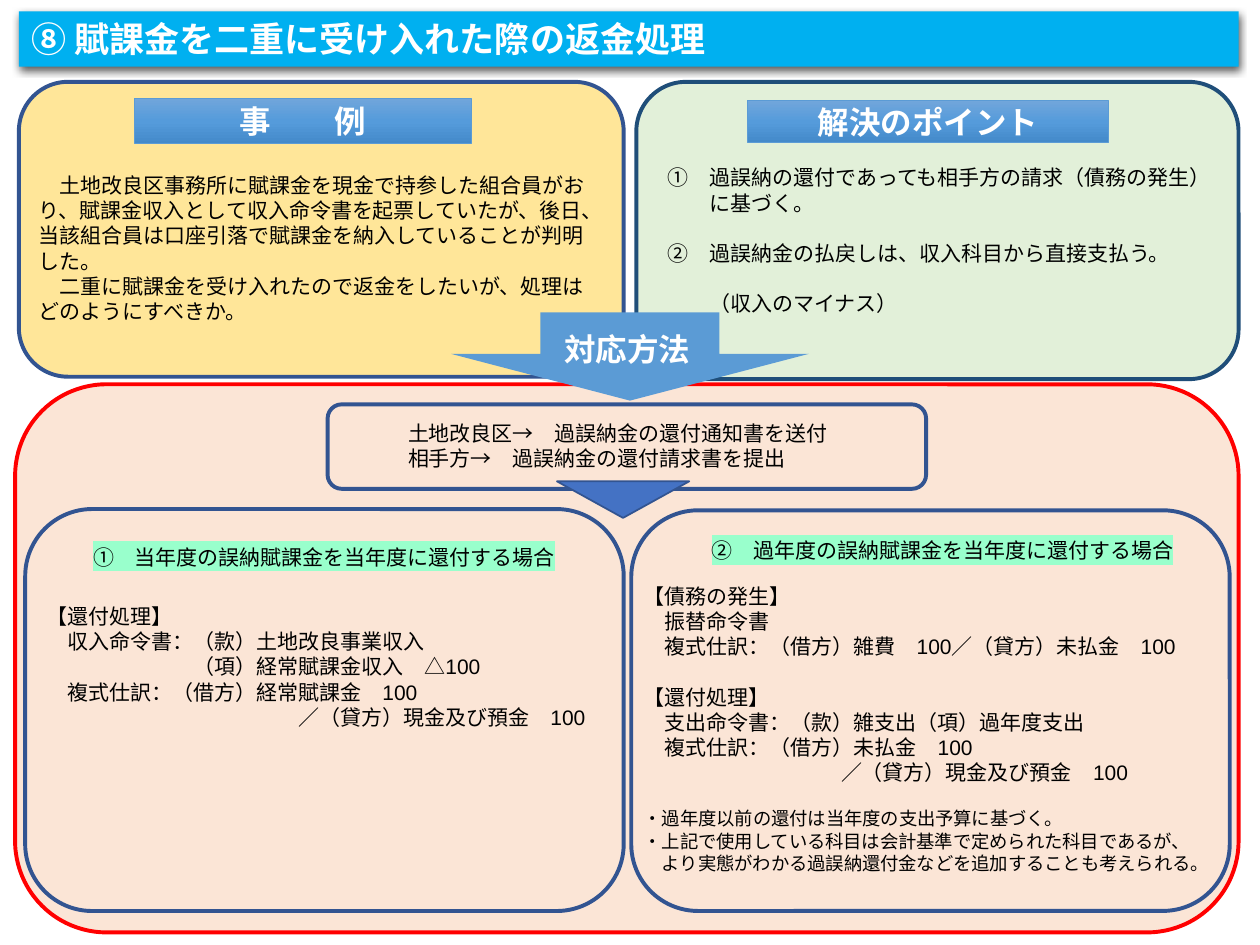
from copy import deepcopy

from lxml import etree
from pptx import Presentation
from pptx.dml.color import RGBColor
from pptx.enum.shapes import MSO_SHAPE
from pptx.enum.text import MSO_ANCHOR, PP_ALIGN
from pptx.oxml.ns import qn
from pptx.util import Inches, Pt

RECTANGLE = MSO_SHAPE.RECTANGLE
ROUNDED = MSO_SHAPE.ROUNDED_RECTANGLE
DOWN_ARROW = MSO_SHAPE.DOWN_ARROW
MERGE = MSO_SHAPE.FLOWCHART_MERGE
TOP, MIDDLE = MSO_ANCHOR.TOP, MSO_ANCHOR.MIDDLE
LEFT, CENTER = PP_ALIGN.LEFT, PP_ALIGN.CENTER

LATIN, JAPANESE = "Arial", "Noto Sans CJK JP"
BLACK, WHITE, RED = "000000", "FFFFFF", "FF0000"
SKY, BLUE, ROYAL, INDIGO, NAVY = "00B0F0", "5B9BD5", "4472C4", "325491", "1F4E79"
YELLOW, GREEN, PEACH, MINT = "FFE699", "E2F0D9", "FBE5D6", "99FFCC"
LABEL_GRADIENT = ("71A6DB", "559BDB", "448ACA")
LINE_RATIO = 1.2


def color(hex_value):
    return RGBColor.from_string(hex_value)


class SlideBuilder:
    """Holds the style and the current slide, and draws each kind of element."""

    def __init__(self, slide):
        self.slide = slide

    def shape(self, kind, box, fill=None, line=None, width=2.25):
        shape = self.slide.shapes.add_shape(kind, *map(Inches, box))
        shape.shadow.inherit = False
        if fill:
            shape.fill.solid()
            shape.fill.fore_color.rgb = color(fill)
        else:
            shape.fill.background()
        if line:
            shape.line.color.rgb = color(line)
            shape.line.width = Pt(width)
        else:
            shape.line.fill.background()
        return shape

    def shadow(self, shape):
        effects = shape.element.spPr.find(qn("a:effectLst"))
        outer = etree.SubElement(effects, qn("a:outerShdw"), blurRad=str(Pt(4.5)),
                                 dist=str(Pt(1.5)), dir="5400000", rotWithShape="0")
        black = etree.SubElement(outer, qn("a:srgbClr"), val=BLACK)
        etree.SubElement(black, qn("a:alpha"), val="63000")

    def label(self, box, text):
        shape = self.shape(RECTANGLE, box, BLUE, BLUE, 0.5)
        shape.fill.gradient()
        shape.fill.gradient_angle = 270
        stops = shape.element.spPr.find(".//" + qn("a:gsLst"))
        middle = deepcopy(stops[0])
        stops.insert(1, middle)
        for index, stop in enumerate(shape.fill.gradient_stops):
            stop.position = index / 2
            stop.color.rgb = color(LABEL_GRADIENT[index])
        self.add_lines(shape, [(text,)], 18, WHITE, True, CENTER, MIDDLE)

    def text(self, box, lines, **style):
        self.add_lines(self.slide.shapes.add_textbox(*map(Inches, box)), lines, **style)

    def add_lines(self, shape, lines, size=12, ink=BLACK, bold=False, align=LEFT,
                  anchor=TOP, font=LATIN, highlight=None):
        """Add lines of (text, left indent, first-line indent, blank lines before), in characters."""
        frame = shape.text_frame
        frame.word_wrap = True
        frame.vertical_anchor = anchor
        for index, (words, *layout) in enumerate(lines):
            left, first, gap = (layout + [0, 0, 0])[:3]
            paragraph = frame.add_paragraph() if index else frame.paragraphs[0]
            paragraph.alignment = align
            paragraph.line_spacing = Pt(size * LINE_RATIO)
            paragraph.space_before = Pt(gap * size * LINE_RATIO)
            properties = paragraph._p.get_or_add_pPr()
            properties.set("marL", str(Pt(left * size)))
            properties.set("indent", str(Pt(first * size)))
            self.run(paragraph, words, size, ink, bold, font, highlight)

    def run(self, paragraph, words, size, ink, bold, font, highlight):
        run = paragraph.add_run()
        run.text = words
        run.font.size = Pt(size)
        run.font.bold = bold
        run.font.color.rgb = color(ink)
        run.font.name = font
        properties = run._r.get_or_add_rPr()
        latin = properties.find(qn("a:latin"))
        latin.addnext(latin.makeelement(qn("a:ea"), {"typeface": JAPANESE}))
        if highlight:
            marker = latin.makeelement(qn("a:highlight"), {})
            etree.SubElement(marker, qn("a:srgbClr"), val=highlight)
            latin.addprevious(marker)


def main():
    presentation = Presentation()
    presentation.slide_width, presentation.slide_height = Inches(10), Inches(7.5)
    builder = SlideBuilder(presentation.slides.add_slide(presentation.slide_layouts[6]))

    builder.shape(ROUNDED, (0.12, 3.05, 9.71, 4.35), PEACH, RED)
    title = builder.shape(RECTANGLE, (0.15, 0.09, 9.68, 0.44), SKY)
    builder.shadow(title)
    builder.add_lines(title, [("⑧ 賦課金を二重に受け入れた際の返金処理",)], 20, WHITE, True)

    builder.shape(ROUNDED, (5.05, 0.65, 4.78, 2.36), GREEN, NAVY)
    points = builder.shape(RECTANGLE, (5.2, 1.26, 4.57, 1.31), GREEN)
    builder.add_lines(points, [
        ("①　過誤納の還付であっても相手方の請求（債務の発生）", 2, -2),
        ("に基づく。", 2),
        ("②　過誤納金の払戻しは、収入科目から直接支払う。", 2, -2, 1),
        ("（収入のマイナス）", 2, 0, 1),
    ])
    builder.label((5.93, 0.8, 2.87, 0.33), "解決のポイント")

    builder.shape(ROUNDED, (0.15, 0.65, 4.8, 2.34), YELLOW, INDIGO)
    case = builder.shape(RECTANGLE, (0.21, 1.32, 4.62, 1.31), YELLOW)
    builder.add_lines(case, [
        ("土地改良区事務所に賦課金を現金で持参した組合員がおり、賦課金収入として"
         "収入命令書を起票していたが、後日、当該組合員は口座引落で賦課金を"
         "納入していることが判明した。", 0, 1),
        ("二重に賦課金を受け入れたので返金をしたいが、処理はどのようにすべきか。", 0, 1),
    ])
    builder.label((1.07, 0.78, 2.67, 0.36), "事　　例")

    arrow = builder.shape(DOWN_ARROW, (3.58, 2.48, 2.84, 0.7), BLUE)
    arrow.adjustments[1] = 0.53
    response = builder.shape(RECTANGLE, (4.38, 2.57, 1.24, 0.4), BLUE)
    builder.add_lines(response, [("対応方法",)], 18, WHITE, True)

    heading = {"font": JAPANESE, "highlight": MINT}
    builder.shape(ROUNDED, (0.2, 4.04, 4.75, 3.19), None, INDIGO)
    builder.text((0.64, 4.27, 3.95, 0.3),
                 [("①　当年度の誤納賦課金を当年度に還付する場合",)], **heading)
    builder.text((0.27, 4.74, 4.49, 1.31), [
        ("【還付処理】",),
        ("収入命令書：（款）土地改良事業収入", 1),
        ("（項）経常賦課金収入　△100", 7),
        ("複式仕訳：（借方）経常賦課金　100", 1),
        ("／（貸方）現金及び預金　100", 12),
    ])

    builder.shape(ROUNDED, (2.6, 3.21, 4.75, 0.67), None, INDIGO)
    builder.text((3.14, 3.29, 3.76, 0.5), [
        ("土地改良区→　過誤納金の還付通知書を送付",),
        ("相手方→　過誤納金の還付請求書を提出",),
    ])

    builder.shape(ROUNDED, (5.01, 4.05, 4.75, 3.18), None, INDIGO)
    builder.text((5.55, 4.22, 3.87, 0.3),
                 [("②　過年度の誤納賦課金を当年度に還付する場合",)], **heading)
    builder.text((5.01, 4.58, 4.69, 1.7), [
        ("【債務の発生】",),
        ("振替命令書", 1),
        ("複式仕訳：（借方）雑費　100／（貸方）未払金　100", 1),
        ("【還付処理】", 0, 0, 1),
        ("支出命令書：（款）雑支出（項）過年度支出", 1),
        ("複式仕訳：（借方）未払金　100", 1),
        ("／（貸方）現金及び預金　100", 9.4),
    ])
    builder.text((5.01, 6.36, 4.69, 0.65), [
        ("・過年度以前の還付は当年度の支出予算に基づく。",),
        ("・上記で使用している科目は会計基準で定められた科目であるが、",),
        ("より実態がわかる過誤納還付金などを追加することも考えられる。", 1),
    ], size=10.5)

    builder.shape(MERGE, (4.42, 3.82, 1.05, 0.29), ROYAL, INDIGO, 1)
    presentation.save("out.pptx")


if __name__ == "__main__":
    main()
